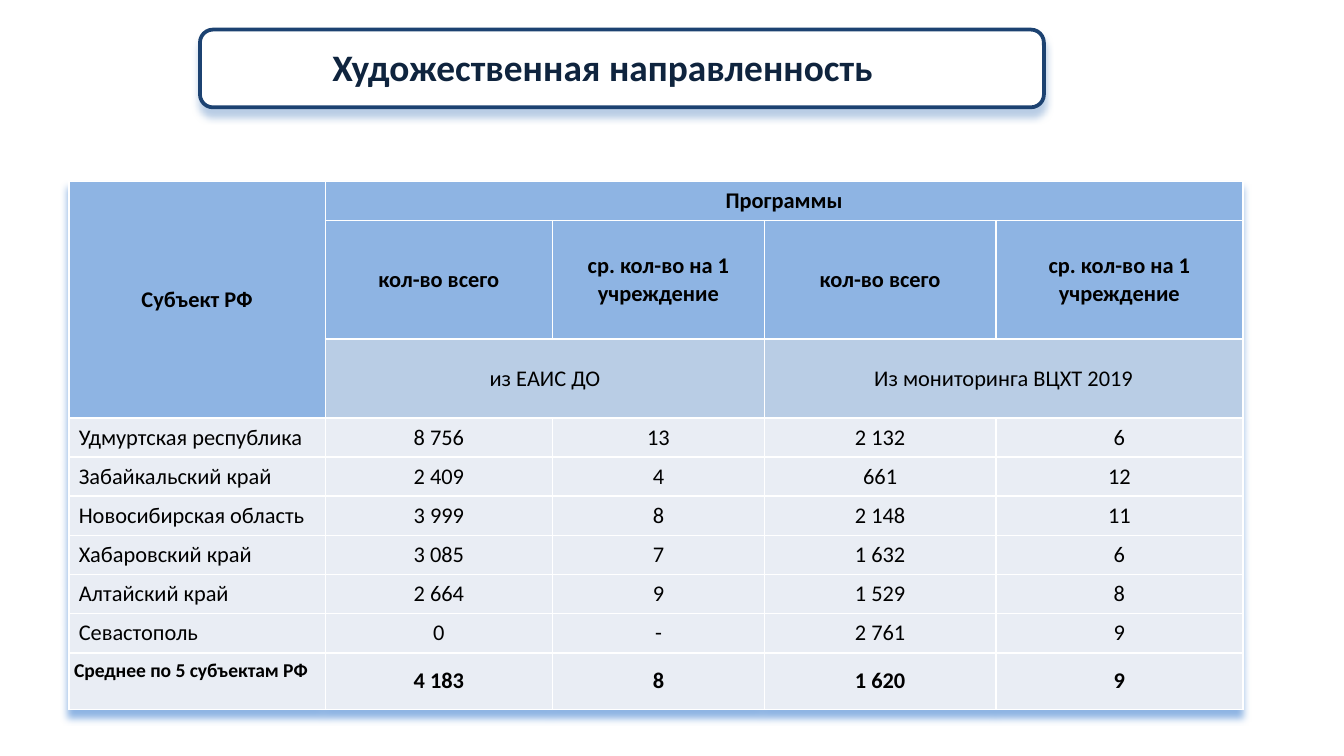
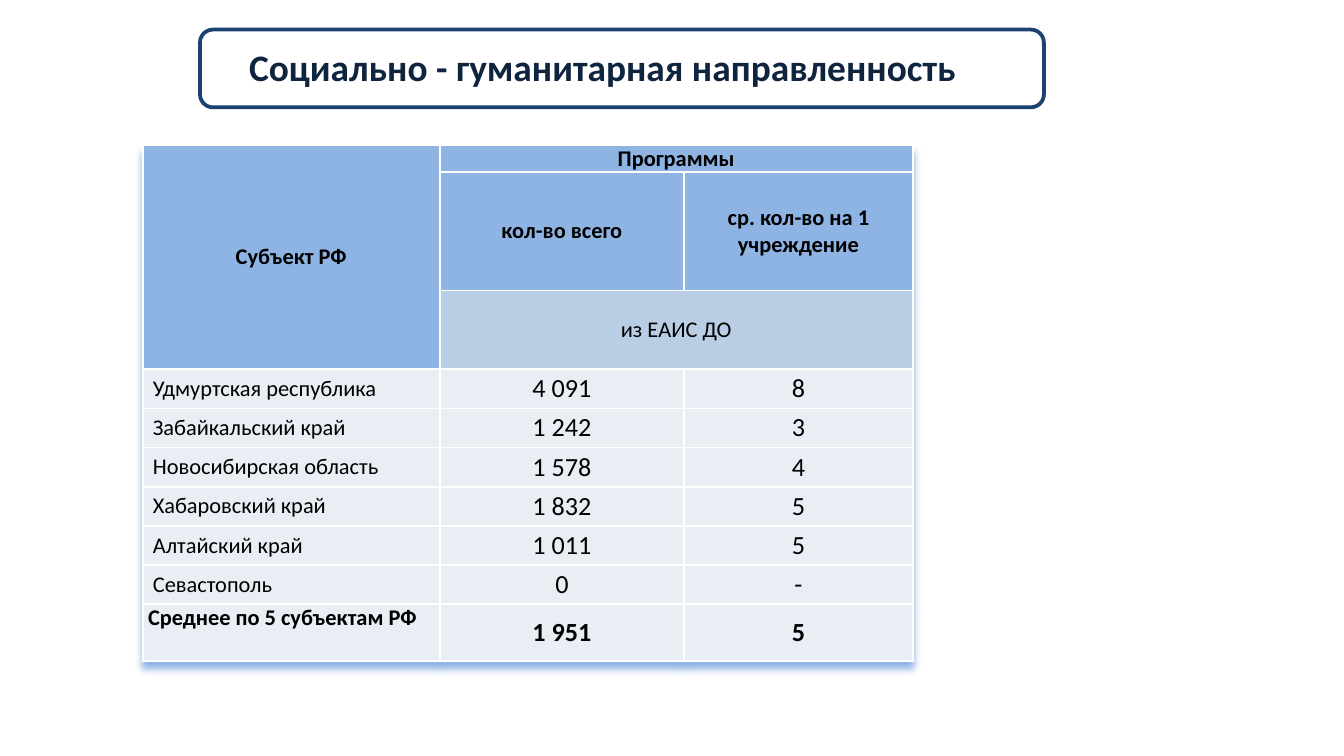
from lxml.etree import SubElement
from pptx import Presentation
from pptx.dml.color import RGBColor
from pptx.enum.shapes import MSO_SHAPE
from pptx.enum.text import MSO_ANCHOR, PP_ALIGN
from pptx.oxml.ns import qn
from pptx.util import Cm, Pt

FONT = "Calibri"
COLORS = {
    "white": "FFFFFF", "text": "000000", "title": "0F243E", "frame": "1C4271",
    "header": "8EB4E3", "source": "B9CDE5", "body": "E9EDF4", "shadow": "B9CDE5",
}
REGIONS = ["Удмуртская республика", "Забайкальский край", "Новосибирская область",
           "Хабаровский край", "Алтайский край", "Севастополь"]
SUBJECT, PROGRAMS, AVERAGE = "Субъект РФ", "Программы", "Среднее по 5 субъектам РФ"
MEASURES = ["кол-во всего", "ср. кол-во на 1 учреждение"]
SUBHEAD_H, SOURCE_H, REGION_H, AVERAGE_H = 2.24, 1.49, 0.74, 1.07

SLIDES = [
    {
        "title": "Художественная направленность",
        "frame_shadow": True,
        "left": 1.3, "top": 3.43, "cols": [4.85, 4.29, 4.01, 4.37, 4.67],
        "programs_h": 0.74, "value_size": 12,
        "average_size": 10.5, "average_top": 0.11,
        "sources": ["из ЕАИС ДО", "Из мониторинга ВЦХТ 2019"],
        "values": [
            ["8 756", "13", "2 132", "6"],
            ["2 409", "4", "661", "12"],
            ["3 999", "8", "2 148", "11"],
            ["3 085", "7", "1 632", "6"],
            ["2 664", "9", "1 529", "8"],
            ["0", "-", "2 761", "9"],
        ],
        "average": ["4 183", "8", "1 620", "9"],
    },
    {
        "title": "Социально - гуманитарная направленность",
        "frame_shadow": False,
        "left": 2.7, "top": 2.74, "cols": [5.61, 4.62, 4.32],
        "programs_h": 0.51, "value_size": 14,
        "average_size": 12, "average_top": 0,
        "sources": ["из ЕАИС ДО"],
        "values": [["4 091", "8"], ["1 242", "3"], ["1 578", "4"],
                   ["1 832", "5"], ["1 011", "5"], ["0", "-"]],
        "average": ["1 951", "5"],
    },
]


def rgb(name):
    return RGBColor.from_string(COLORS[name])


def solid(parent, color):
    fill = SubElement(parent, qn("a:solidFill"))
    SubElement(fill, qn("a:srgbClr"), val=COLORS[color])


def add_shadow(parent, color):
    effects = SubElement(parent, qn("a:effectLst"))
    shadow = SubElement(effects, qn("a:outerShdw"), blurRad=str(Pt(4)), dist=str(Pt(4)),
                        dir="5400000", algn="ctr", rotWithShape="0")
    SubElement(shadow, qn("a:srgbClr"), val=COLORS[color])
    return effects


def write(tf, text, size, bold, color="text", align=PP_ALIGN.CENTER):
    p = tf.paragraphs[0]
    p.alignment = align
    r = p.add_run()
    r.text = text
    r.font.name, r.font.size, r.font.bold = FONT, Pt(size), bold
    r.font.color.rgb = rgb(color)
    return p


def add_title(slide, text, has_shadow):
    sp = slide.shapes.add_shape(MSO_SHAPE.ROUNDED_RECTANGLE, Cm(3.78), Cm(0.56), Cm(15.95), Cm(1.47))
    sp.fill.solid()
    sp.fill.fore_color.rgb = rgb("white")
    sp.line.color.rgb = rgb("frame")
    sp.line.width = Pt(2)
    if has_shadow:
        add_shadow(sp._element.spPr, "shadow")
    else:
        sp.shadow.inherit = False
    tf = slide.shapes.add_textbox(Cm(2.31), Cm(0.33), Cm(18.16), Cm(1.96)).text_frame
    tf.word_wrap = True
    tf.vertical_anchor = MSO_ANCHOR.MIDDLE
    tf.margin_left = tf.margin_right = tf.margin_top = tf.margin_bottom = Cm(0.48)
    write(tf, text, 20, True, "title").line_spacing = 0.9


def style_cell(cell, fill):
    cell.margin_left = cell.margin_right = cell.margin_top = cell.margin_bottom = 0
    cell.vertical_anchor = MSO_ANCHOR.MIDDLE
    tc_pr = cell._tc.get_or_add_tcPr()
    for side in ("lnL", "lnR", "lnT", "lnB"):
        solid(SubElement(tc_pr, qn(f"a:{side}"), w=str(Pt(1))), "white")
    cell.fill.solid()
    cell.fill.fore_color.rgb = rgb(fill)


def add_programs_table(slide, data):
    cols = data["cols"]
    heights = [data["programs_h"], SUBHEAD_H, SOURCE_H] + [REGION_H] * len(REGIONS) + [AVERAGE_H]
    last = len(heights) - 1
    frame = slide.shapes.add_table(len(heights), len(cols), Cm(data["left"]), Cm(data["top"]),
                                   Cm(sum(cols)), Cm(sum(heights)))
    table = frame.table
    table.first_row = table.horz_banding = False
    tbl_pr = table._tbl.tblPr
    tbl_pr.insert(0, add_shadow(tbl_pr, "header"))
    for col, width in zip(table.columns, cols):
        col.width = Cm(width)
    for i, (row, height) in enumerate(zip(table.rows, heights)):
        row.height = Cm(height)
        for j, cell in enumerate(row.cells):
            is_header = i < 2 or (i == 2 and j == 0)
            style_cell(cell, "header" if is_header else "source" if i == 2 else "body")

    def put(i, j, text, size=12, bold=False, **options):
        write(table.cell(i, j).text_frame, text, size, bold, **options)

    table.cell(0, 0).merge(table.cell(2, 0))
    table.cell(0, 1).merge(table.cell(0, len(cols) - 1))
    put(0, 0, SUBJECT, bold=True)
    put(0, 1, PROGRAMS, bold=True)
    for k, source in enumerate(data["sources"]):
        first = 1 + k * len(MEASURES)
        for j, measure in enumerate(MEASURES, first):
            put(1, j, measure, bold=True)
        table.cell(2, first).merge(table.cell(2, first + len(MEASURES) - 1))
        put(2, first, source)

    for i, (region, values) in enumerate(zip(REGIONS, data["values"]), 3):
        put(i, 0, region, align=PP_ALIGN.LEFT)
        table.cell(i, 0).margin_left = Cm(0.19)
        for j, value in enumerate(values, 1):
            put(i, j, value, data["value_size"])

    label = table.cell(last, 0)
    label.vertical_anchor = MSO_ANCHOR.TOP
    label.margin_left, label.margin_top = Cm(0.1), Cm(data["average_top"])
    put(last, 0, AVERAGE, data["average_size"], True, align=PP_ALIGN.LEFT)
    for j, value in enumerate(data["average"], 1):
        put(last, j, value, data["value_size"], True)


def main():
    prs = Presentation()
    prs.slide_width, prs.slide_height = Cm(25.4), Cm(14.29)
    for data in SLIDES:
        slide = prs.slides.add_slide(prs.slide_layouts[6])
        add_title(slide, data["title"], data["frame_shadow"])
        add_programs_table(slide, data)
    prs.save("out.pptx")


if __name__ == "__main__":
    main()
